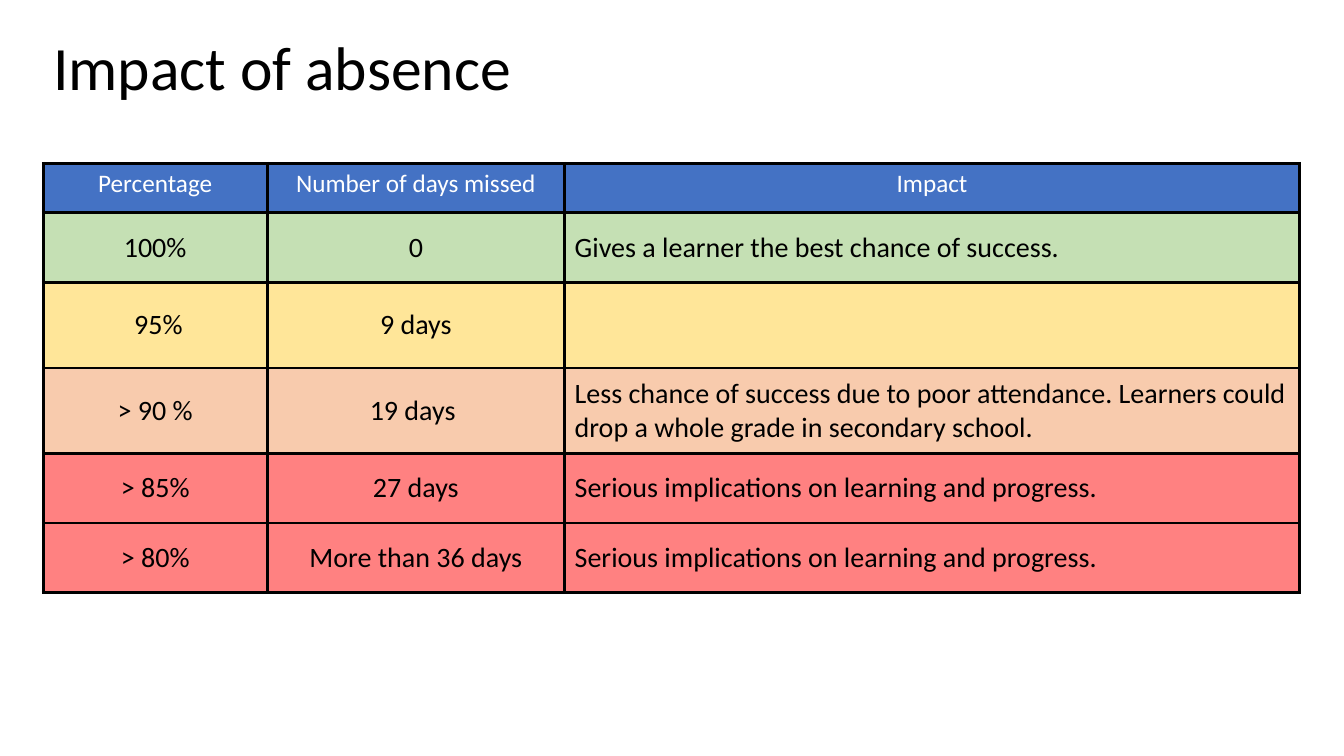
from lxml import etree
from pptx import Presentation
from pptx.dml.color import RGBColor
from pptx.enum.text import MSO_ANCHOR as Anchor, PP_ALIGN as Align
from pptx.oxml.ns import qn
from pptx.util import Inches, Pt

FONT = "Calibri"
BLACK, WHITE = "000000", "FFFFFF"
HEADER_FILL, GREEN, YELLOW, ORANGE, RED = "4472C4", "C5E0B4", "FFE699", "F8CBAD", "FF8181"
COLUMN_WIDTHS = [2.22, 2.95, 7.29]
# Row height, fill, cell texts
ROWS = [
    (0.49, HEADER_FILL, ["Percentage", "Number of days missed", "Impact"]),
    (0.69, GREEN, ["100%", "0", "Gives a learner the best chance of success."]),
    (0.85, YELLOW, [" 95%", "9 days", ""]),
    (0.85, ORANGE, ["> 90 %", "19 days ",
                    "Less chance of success due to poor attendance. "
                    "Learners could drop a whole grade in secondary school."]),
    (0.69, RED, ["> 85%", "27 days", "Serious implications on learning and progress."]),
    (0.69, RED, ["> 80%", "More than 36 days", "Serious implications on learning and progress."]),
]


def color(value):
    return RGBColor.from_string(value)


def write(frame, text, size, ink, **paragraph_format):
    para = frame.paragraphs[0]
    for name, value in paragraph_format.items():
        setattr(para, name, value)
    span = para.add_run()
    span.text = text
    for name, value in {"name": FONT, "size": Pt(size)}.items():
        setattr(span.font, name, value)
    span.font.color.rgb = color(ink)


def add_borders(cell, width=2.25):
    properties = cell._tc.get_or_add_tcPr()
    # Border lines come before the fill
    for index, side in enumerate(("lnL", "lnR", "lnT", "lnB")):
        line = etree.Element(qn(f"a:{side}"), w=str(Pt(width)))
        fill = etree.SubElement(line, qn("a:solidFill"))
        etree.SubElement(fill, qn("a:srgbClr"), val=BLACK)
        properties.insert(index, line)


def add_title(page, left, top, width, height):
    box = page.shapes.add_textbox(*map(Inches, (left, top, width, height)))
    frame = box.text_frame
    frame.word_wrap = True
    frame.vertical_anchor = Anchor.MIDDLE
    write(frame, "Impact of absence ", 44, BLACK, line_spacing=0.9)


def add_absence_table(page, left, top, width, height):
    table = page.shapes.add_table(len(ROWS), len(COLUMN_WIDTHS),
                                  *map(Inches, (left, top, width, height))).table
    for column, column_width in zip(table.columns, COLUMN_WIDTHS):
        column.width = Inches(column_width)
    for r, (row_height, fill, texts) in enumerate(ROWS):
        table.rows[r].height = Inches(row_height)
        is_header = r == 0
        size, ink = (18, WHITE) if is_header else (20, BLACK)
        for c, text in enumerate(texts):
            cell = table.cell(r, c)
            cell.fill.solid()
            cell.fill.fore_color.rgb = color(fill)
            cell.vertical_anchor = Anchor.TOP if is_header else Anchor.MIDDLE
            add_borders(cell)
            if text:
                centred = is_header or c < 2
                write(cell.text_frame, text, size, ink,
                      alignment=Align.CENTER if centred else Align.LEFT)
                cell.text_frame.paragraphs[0].runs[0].font.bold = False


def main():
    deck = Presentation()
    deck.slide_width, deck.slide_height = Inches(13.33), Inches(7.5)
    page = deck.slides.add_slide(deck.slide_layouts[6])
    add_title(page, 0.43, 0.32, 5.93, 0.75)
    add_absence_table(page, 0.43, 1.62, 12.46, 4.26)
    deck.save("out.pptx")


if __name__ == "__main__":
    main()
